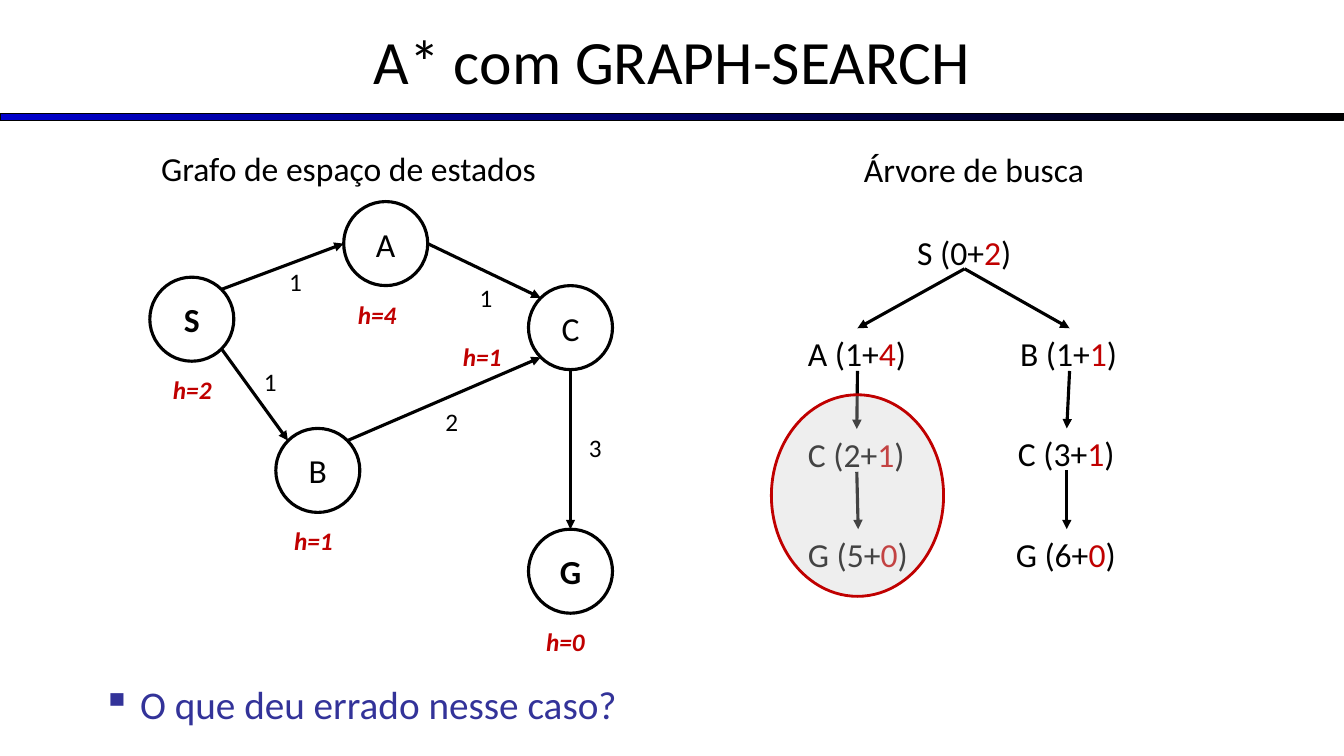
from lxml import etree
from pptx import Presentation
from pptx.dml.color import RGBColor
from pptx.enum import shapes, text
from pptx.oxml import ns
from pptx.util import Pt

COLORS = {"black": "000000", "white": "FFFFFF", "blue": "0000CC",
          "red": "C00000", "indigo": "333399", "gray": "CCCCCC"}
RGB = {name: RGBColor.from_string(value) for name, value in COLORS.items()}
LINE = Pt(2.25)


def write_text(box, spans, size, **font):
    """Fill the box with one paragraph of (text, colour name) spans."""
    para = box.text_frame.paragraphs[0]
    for words, color in spans:
        span = para.add_run()
        span.text = words
        formats = {"name": "Calibri", "size": Pt(size), **font}
        for key, value in formats.items():
            setattr(span.font, key, value)
        span.font.color.rgb = RGB[color]
    return para


def add_arrow(start, end):
    arrow = page.shapes.add_connector(
        shapes.MSO_CONNECTOR.STRAIGHT, *map(Pt, (*start, *end)))
    arrow.line.width = LINE
    arrow.line.color.rgb = RGB["black"]
    etree.SubElement(arrow.line._get_or_add_ln(), ns.qn("a:tailEnd"), type="triangle")
    etree.SubElement(arrow._element.spPr, ns.qn("a:effectLst"))


deck = Presentation()
deck.slide_width, deck.slide_height = Pt(960), Pt(540)
page = deck.slides.add_slide(deck.slide_layouts[6])

# Title and rule
rule = page.shapes.add_shape(
    shapes.MSO_SHAPE.RECTANGLE, Pt(0), Pt(81), Pt(960), Pt(5))
rule.shadow.inherit = False
rule.fill.gradient()
rule.fill.gradient_angle = 0
for stop, color in zip(rule.fill.gradient_stops, ("blue", "black")):
    stop.color.rgb = RGB[color]
rule.line.color.rgb = RGB["black"]
rule.line.width = Pt(0.75)

title = page.shapes.add_textbox(Pt(0), Pt(-2), Pt(960), Pt(90))
title.text_frame.word_wrap = True
title.text_frame.vertical_anchor = text.MSO_ANCHOR.MIDDLE
para = write_text(title, [("A* com GRAPH-SEARCH", "black")], 44)
para.alignment = text.PP_ALIGN.CENTER

# State space graph: node centres
RADIUS = 30
DIAGONAL = RADIUS * 0.71
nodes = {"S": (137, 228), "A": (275.5, 174), "B": (227, 336),
         "C": (407.5, 234), "G": (407.5, 408)}
for name, (x, y) in nodes.items():
    node = page.shapes.add_shape(
        shapes.MSO_SHAPE.OVAL, Pt(x - RADIUS), Pt(y - RADIUS), Pt(2 * RADIUS), Pt(2 * RADIUS))
    node.shadow.inherit = False
    node.fill.solid()
    node.fill.fore_color.rgb = RGB["white"]
    node.line.color.rgb = RGB["black"]
    node.line.width = LINE
    node.text_frame.vertical_anchor = text.MSO_ANCHOR.MIDDLE
    para = write_text(node, [(name, "black")], 24, bold=name in "SG")
    para.alignment = text.PP_ALIGN.CENTER

sides = {"right": (RADIUS, 0), "left": (-RADIUS, 0),
         "top": (0, -RADIUS), "bottom": (0, RADIUS),
         "top right": (DIAGONAL, -DIAGONAL), "top left": (-DIAGONAL, -DIAGONAL),
         "bottom right": (DIAGONAL, DIAGONAL), "bottom left": (-DIAGONAL, DIAGONAL)}
edges = [("S", "top right", "A", "left"), ("S", "bottom right", "B", "top left"),
         ("B", "top right", "C", "bottom left"), ("A", "right", "C", "top left"),
         ("C", "bottom", "G", "top")]
for source, leave, target, enter in edges:
    add_arrow([a + b for a, b in zip(nodes[source], sides[leave])],
              [a + b for a, b in zip(nodes[target], sides[enter])])

# Search tree arrows
ROOT = (689, 192)
for start, end in [(ROOT, (764, 234.5)), (ROOT, (612.5, 234.5)),
                   ((612.5, 265), (612, 306.5)), ((612, 337), (613, 378)),
                   ((764, 265), (762, 306)), ((762, 336), (762, 378))]:
    add_arrow(start, end)

# Labels: left, top, width, height, spans, size, font formats
labels = [(108, 102, 284, 36, [("Grafo de espaço de estados", "black")], 24, {}),
          (610, 103, 173.5, 36, [("Árvore de busca", "black")], 24, {})]
for cost, x, y in [("1", 199.5, 187), ("1", 181.5, 258), ("1", 335.5, 198),
                   ("2", 311, 287), ("3", 413.5, 305.5)]:
    labels.append((x, y, 24.5, 29, [(cost, "black")], 18, {}))
for h, x, y in [("h=2", 116.5, 264), ("h=1", 203, 372), ("h=4", 248.5, 210),
                ("h=1", 323.5, 240), ("h=0", 383, 444)]:
    labels.append((x, y, 47, 29, [(h, "red")], 18, {"bold": True, "italic": True}))
for state, g, h, x, y, width in [
        ("S", 0, 2, 648, 162, 83), ("A", 1, 4, 570, 234.5, 85.5),
        ("B", 1, 1, 721.5, 234.5, 84), ("C", 2, 1, 570, 306.5, 84),
        ("G", 5, 0, 570, 378, 86.5), ("C", 3, 1, 720, 306, 84),
        ("G", 6, 0, 718.5, 378, 86.5)]:
    spans = [(f"{state} ({g}+", "black"), (str(h), "red"), (")", "black")]
    labels.append((x, y, width, 36, spans, 24, {}))
for *place, spans, size, font in labels:
    label = page.shapes.add_textbox(*map(Pt, place))
    label.text_frame.word_wrap = False
    label.text_frame.auto_size = text.MSO_AUTO_SIZE.SHAPE_TO_FIT_TEXT
    write_text(label, spans, size, **font)

# Question
question = page.shapes.add_textbox(Pt(66), Pt(486), Pt(870), Pt(42))
question.text_frame.word_wrap = True
para = write_text(question, [("O que deu errado nesse caso?", "indigo")], 28)
para.line_spacing = 0.9
bullet = para._p.get_or_add_pPr()
bullet.set("marL", str(Pt(27)))
bullet.set("indent", str(Pt(-27)))
bullet_color = etree.SubElement(bullet, ns.qn("a:buClr"))
etree.SubElement(bullet_color, ns.qn("a:srgbClr"), val=COLORS["indigo"])
etree.SubElement(bullet, ns.qn("a:buChar"), char="▪")

# Discarded branch
discarded = page.shapes.add_shape(
    shapes.MSO_SHAPE.OVAL, Pt(551), Pt(282), Pt(123), Pt(144))
discarded.shadow.inherit = False
discarded.fill.solid()
discarded.fill.fore_color.rgb = RGB["gray"]
shade = discarded._element.spPr.find(ns.qn("a:solidFill"))[0]
etree.SubElement(shade, ns.qn("a:alpha"), val="33000")
discarded.line.color.rgb = RGB["red"]
discarded.line.width = Pt(2)

deck.save("out.pptx")
